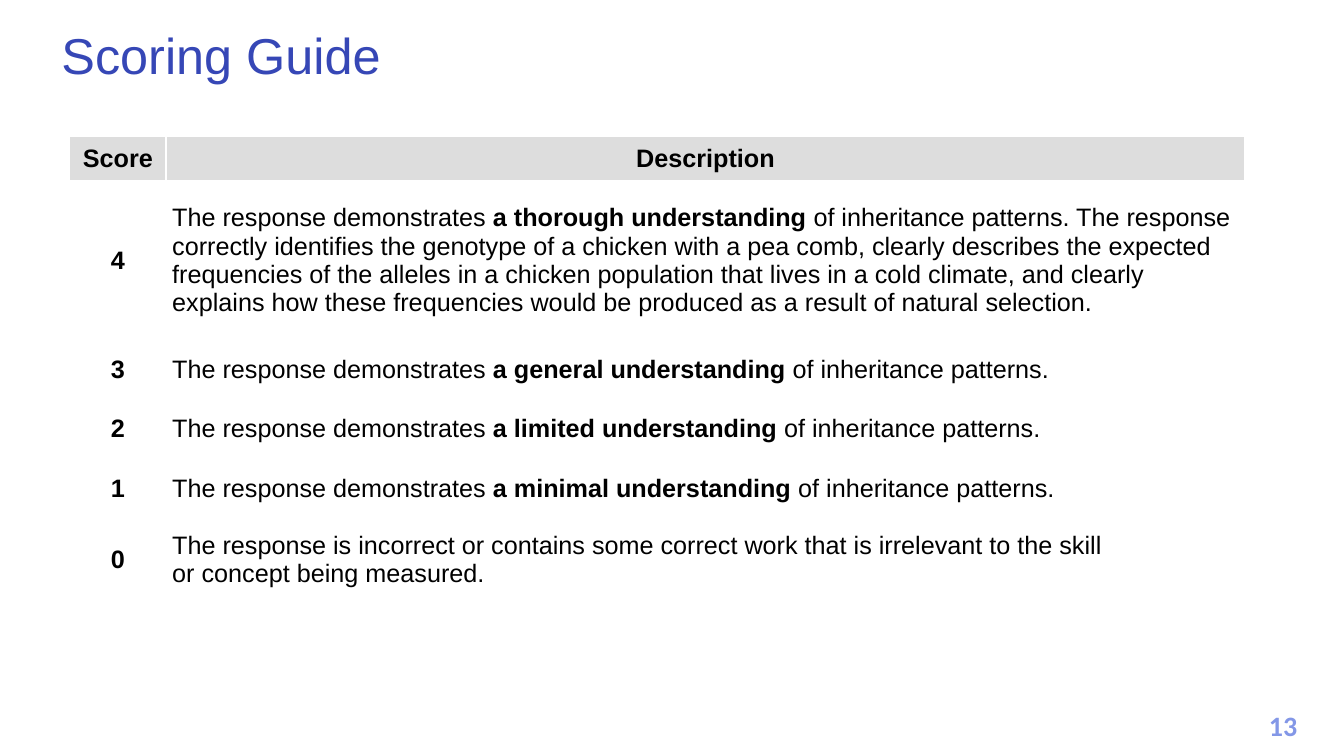
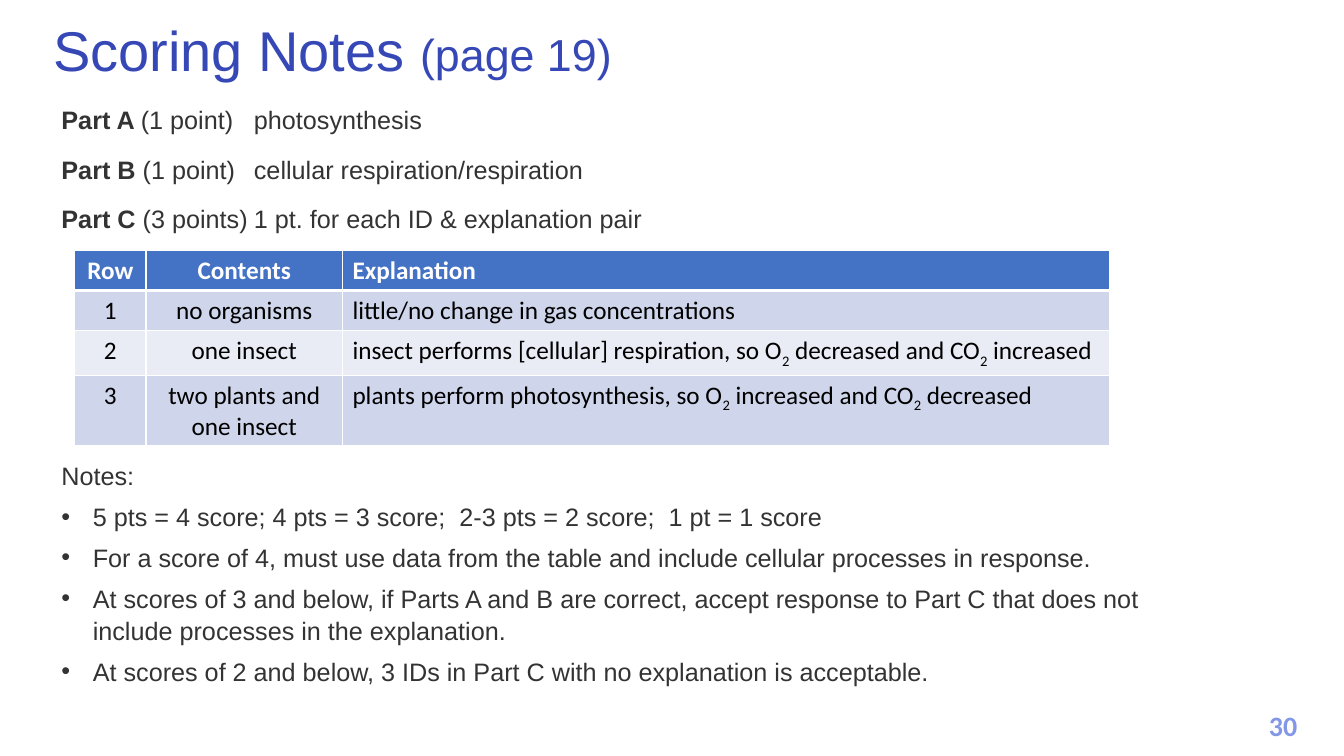
from dataclasses import dataclass
from lxml.etree import SubElement as Sub
from pptx import Presentation as Deck
from pptx.dml.color import RGBColor as Rgb
from pptx.enum.text import MSO_ANCHOR as Anchor, PP_ALIGN as Align
from pptx.oxml.ns import qn
from pptx.util import Cm, Pt


@dataclass(frozen=True)
class Theme:
    """Colours, fonts and type sizes shared by the slides."""
    head: str = "3647B6"
    num: str = "8397E7"
    ink: str = "333333"
    black: str = "000000"
    white: str = "FFFFFF"
    grey: str = "DDDDDD"
    blue: str = "4472C4"
    bands: tuple = ("CFD5EA", "E9EBF5")
    sans: str = "Arial"
    alt: str = "Calibri"
    text: int = 18
    page: int = 20
    title: int = 36
    large: int = 40
    small: int = 32


BOLD = {"bold": True}
SUB = {"base": -25000}


class Pen:
    """Draws styled elements on the current slide."""

    def __init__(self, theme):
        self.theme = theme
        self.deck = Deck()
        self.deck.slide_width, self.deck.slide_height = Cm(33.87), Cm(19.05)

    def page(self, num):
        """Start a slide and number it."""
        self.slide = self.deck.slides.add_slide(self.deck.slide_layouts[6])
        look = self.look(self.theme.num, self.theme.page, self.theme.alt, True)
        self.text((31.55, 17.73, 1.57, 1.12), [str(num)], look,
                  {"alignment": Align.CENTER})

    def look(self, color, size=None, name=None, bold=False):
        """Return the format values of a run."""
        return {"color": color, "size": size or self.theme.text,
                "name": name or self.theme.sans, "bold": bold}

    def run(self, para, text, look):
        """Add one run in the given look."""
        run = para.add_run()
        run.text = text
        for key, val in look.items():
            if key == "color":
                run.font.color.rgb = Rgb.from_string(val)
            elif key == "base":
                run.font._element.set("baseline", str(val))
            else:
                setattr(run.font, key, Pt(val) if key == "size" else val)

    def fill(self, frame, paras, look, form, tab=None, dots=False):
        """Write paragraphs, each a string or a list of runs."""
        for pos, runs in enumerate(paras):
            para = frame.paragraphs[0] if pos == 0 else frame.add_paragraph()
            for key, val in form.items():
                if pos or key != "space_before":
                    setattr(para, key, val)
            props = para._p.get_or_add_pPr()
            if dots and pos:
                props.set("marL", str(Cm(0.79)))
                props.set("indent", str(-Cm(0.79)))
                Sub(props, qn("a:buFont"), typeface=self.theme.sans)
                Sub(props, qn("a:buChar"), char="•")
            if tab:
                stops = Sub(props, qn("a:tabLst"))
                Sub(stops, qn("a:tab"), pos=str(Cm(tab)), algn="l")
            for part in [runs] if isinstance(runs, str) else runs:
                text, more = (part, {}) if isinstance(part, str) else part
                self.run(para, text, look | more)

    def text(self, box, paras, look, form, anchor=Anchor.TOP, **opts):
        """Add a text box."""
        frame = self.slide.shapes.add_textbox(*map(Cm, box)).text_frame
        frame.word_wrap = True
        frame.vertical_anchor = anchor
        self.fill(frame, paras, look, form, **opts)

    def title(self, box, runs, size, anchor):
        """Add the slide title."""
        self.text(box, [runs], self.look(self.theme.head, size),
                  {"line_spacing": 0.9}, anchor)

    def edge(self, cell, widths):
        """Draw white borders, given left, right, top and bottom."""
        props = cell._tc.get_or_add_tcPr()
        for side, width in zip("LRTB", widths):
            line = Sub(props, qn(f"a:ln{side}"), w=str(Pt(width)))
            paint = Sub(line, qn("a:solidFill"))
            Sub(paint, qn("a:srgbClr"), val=self.theme.white)

    def table(self, spot, cols, rows, data, style):
        """Add a table whose style maps row and column to a look."""
        size = (Cm(sum(cols)), Cm(sum(rows)))
        grid = self.slide.shapes.add_table(
            len(rows), len(cols), *map(Cm, spot), *size).table
        grid.horz_banding = False
        for col, width in zip(grid.columns, cols):
            col.width = Cm(width)
        for row, tall in zip(grid.rows, rows):
            row.height = Cm(tall)
        for r, line in enumerate(data):
            for c, paras in enumerate(line):
                cell = grid.cell(r, c)
                look, align, back, edge, form = style(r, c)
                self.edge(cell, edge)
                for key, val in form.items():
                    setattr(cell, key, val)
                if back:
                    cell.fill.solid()
                    cell.fill.fore_color.rgb = Rgb.from_string(back)
                else:
                    cell.fill.background()
                self.fill(cell.text_frame, paras, look, {"alignment": align})


def guide(pen):
    """Build the scoring guide."""
    theme = pen.theme
    pen.page(13)
    pen.title((1.3, 0.61, 30.53, 1.7), ["Scoring Guide"], theme.title,
              Anchor.MIDDLE)

    def level(word, end=""):
        return [["The response demonstrates ",
                 (f"{word} understanding ", BOLD),
                 "of inheritance patterns." + end]]

    top = (" The response correctly identifies the genotype of a chicken with "
           "a pea comb, clearly describes the expected frequencies of the "
           "alleles in a chicken population that lives in a cold climate, and "
           "clearly explains how these frequencies would be produced as a "
           "result of natural selection.")
    low = ["The response is incorrect or contains some correct work that is "
           "irrelevant to the skill", "or concept being measured."]
    notes = [level("a thorough", top), level("a general"),
             level("a limited"), level("a minimal"), low]
    data = [(["Score"], ["Description"])]
    data += [([str(4 - pos)], note) for pos, note in enumerate(notes)]
    form = {"vertical_anchor": Anchor.MIDDLE,
            "margin_left": Cm(0.15), "margin_right": Cm(0.15),
            "margin_top": Cm(0.08), "margin_bottom": Cm(0.08)}

    def style(r, c):
        mark = r == 0 or c == 0
        return (pen.look(theme.black, bold=mark),
                Align.CENTER if mark else Align.LEFT,
                None if r else theme.grey, [1.5] * 4, form)

    pen.table((1.75, 3.43), (2.44, 27.18),
              (1.14, 3.99, 1.52, 1.47, 1.52, 2.06), data, style)


def notes(pen):
    """Build the scoring notes."""
    theme = pen.theme
    pen.page(30)
    pen.title((1.09, 0, 30.53, 2.24),
              ["Scoring Notes ", ("(page 19)", {"size": theme.small})],
              theme.large, Anchor.BOTTOM)
    body = pen.look(theme.ink)
    parts = [("A", "(1 point)\tphotosynthesis"),
             ("B", "(1 point)\tcellular respiration/respiration"),
             ("C", "(3 points)\t1 pt. for each ID & explanation pair")]
    pen.text((1.3, 2.46, 30.94, 3.43),
             [[(f"Part {key} ", BOLD), rest] for key, rest in parts], body,
             {"line_spacing": 1.07, "space_before": Pt(6),
              "space_after": Pt(6)}, tab=4.85)

    def gas(verb, one, two):
        return [[f"{verb}, so O", ("2", SUB), f" {one} and CO", ("2", SUB),
                 f" {two}"]]

    data = [(["Row"], ["Contents"], ["Explanation"]),
            (["1"], ["no organisms"],
             ["little/no change in gas concentrations"]),
            (["2"], ["one insect"],
             gas("insect performs [cellular] respiration",
                 "decreased", "increased")),
            (["3"], ["two plants and one insect"],
             gas("plants perform photosynthesis", "increased", "decreased"))]

    def style(r, c):
        color, back = ((theme.black, theme.bands[(r - 1) % 2]) if r
                       else (theme.white, theme.blue))
        return (pen.look(color, name=theme.alt, bold=r == 0),
                Align.LEFT if c == 2 else Align.CENTER, back,
                (1, 1, 3 if r == 1 else 1, 1 if r else 3), {})

    pen.table((1.88, 6.3), (1.8, 4.95, 19.33), (0.94, 0.94, 0.94, 1.65),
              data, style)
    pen.text((1.3, 11.43, 29.29, 6.5), [
        "Notes:",
        "5 pts = 4 score; 4 pts = 3 score;  2-3 pts = 2 score;  1 pt = 1 score",
        "For a score of 4, must use data from the table and include cellular "
        "processes in response.",
        "At scores of 3 and below, if Parts A and B are correct, accept "
        "response to Part C that does not include processes in the "
        "explanation.",
        "At scores of 2 and below, 3 IDs in Part C with no explanation is "
        "acceptable."], body,
        {"line_spacing": 1.07, "space_before": Pt(6)}, dots=True)


def main():
    """Build and save the deck."""
    pen = Pen(Theme())
    guide(pen)
    notes(pen)
    pen.deck.save("out.pptx")


if __name__ == "__main__":
    main()
